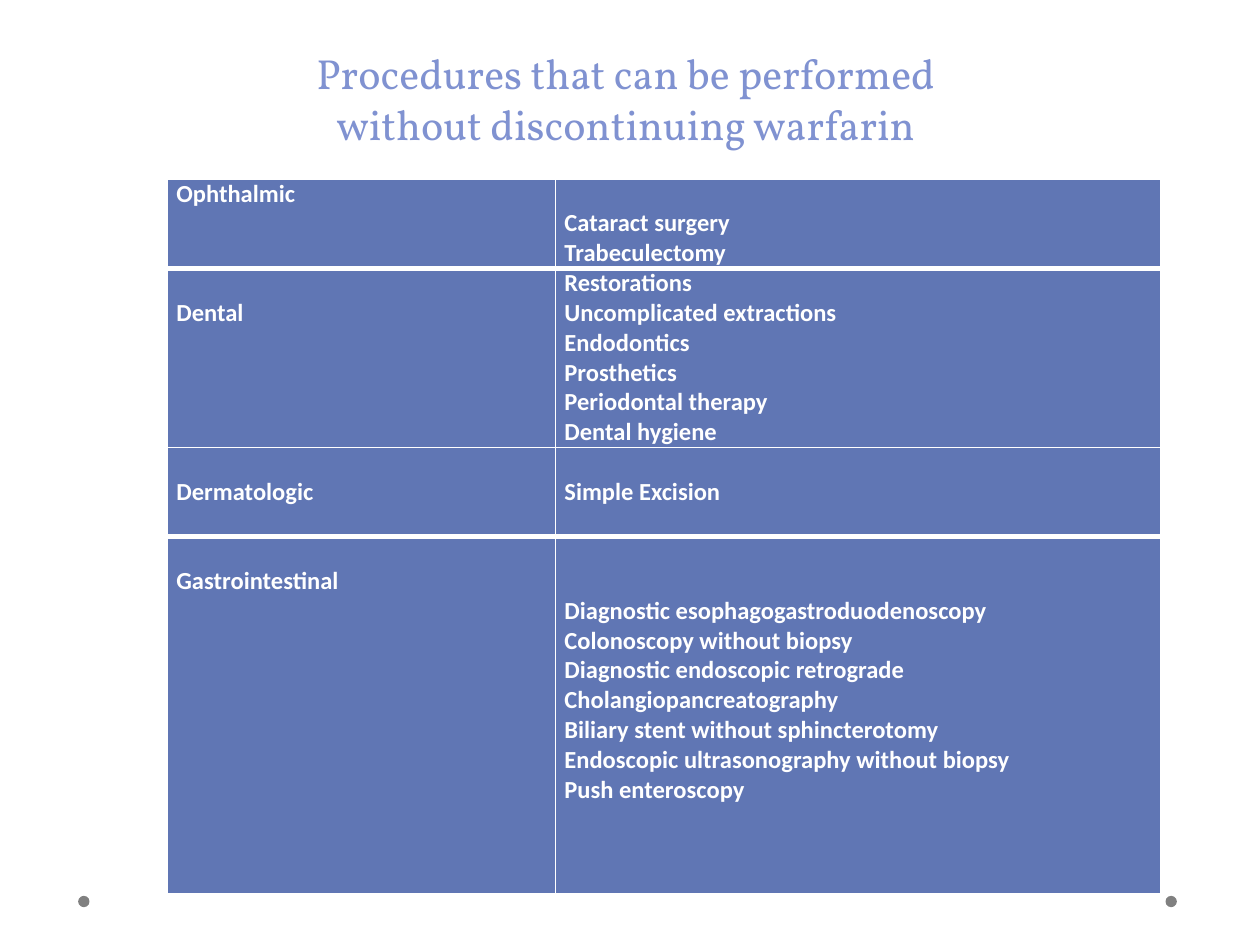
"""Build a slide listing procedures that can go ahead on warfarin."""
import pptx
import pptx.dml.color
import pptx.enum.shapes
import pptx.enum.text
import pptx.oxml.ns
import pptx.util
from lxml import etree
from pptx.util import Inches

COLOURS = {"title": "8092D1", "cell": "6076B4", "white": "FFFFFF", "dot": "808080"}
TITLE_FORMAT = {"name": "Vollkorn", "size": pptx.util.Pt(24), "bold": False}
CELL_FORMAT = {"name": "Calibri", "size": pptx.util.Pt(14), "bold": True}
LINE_HEIGHT = pptx.util.Pt(17)
COLUMN_WIDTHS = (3.08, 4.8)
THIN, THICK = 1, 3
ROW_RULES = (THIN, THICK, THIN, THICK, THIN)
ROWS = [
    (3, (0, ["Ophthalmic"]), (1, ["Cataract surgery", "Trabeculectomy"])),
    (6, (1, ["Dental"]),
     (0, ["Restorations", "Uncomplicated extractions", "Endodontics",
          "Prosthetics", "Periodontal therapy", "Dental hygiene"])),
    (3, (1, ["Dermatologic"]), (1, ["Simple Excision"])),
    (12, (1, ["Gastrointestinal"]),
     (2, ["Diagnostic esophagogastroduodenoscopy", "Colonoscopy without biopsy",
          "Diagnostic endoscopic retrograde Cholangiopancreatography",
          "Biliary stent without sphincterotomy",
          "Endoscopic ultrasonography without biopsy", "Push enteroscopy"])),
]


def colour(name):
    return pptx.dml.color.RGBColor.from_string(COLOURS[name])


def set_attributes(target, values):
    for name, value in values.items():
        setattr(target, name, value)


def write(para, text, font_format, colour_name):
    span = para.add_run()
    span.text = text
    set_attributes(span.font, font_format)
    span.font.color.rgb = colour(colour_name)


def add_title(page, text):
    title = page.shapes.title
    set_attributes(title, {"left": Inches(1.84), "top": Inches(0.25),
                           "width": Inches(6.25), "height": Inches(0.98)})
    frame = title.text_frame
    set_attributes(frame, {"word_wrap": True,
                           "auto_size": pptx.enum.text.MSO_AUTO_SIZE.NONE,
                           "vertical_anchor": pptx.enum.text.MSO_ANCHOR.BOTTOM})
    para = frame.paragraphs[0]
    set_attributes(para, {"alignment": pptx.enum.text.PP_ALIGN.CENTER,
                          "line_spacing": pptx.util.Pt(29)})
    write(para, text, TITLE_FORMAT, "title")


def add_dot(page, left):
    dot = page.shapes.add_shape(pptx.enum.shapes.MSO_SHAPE.OVAL, Inches(left),
                                Inches(7.11), Inches(0.09), Inches(0.09))
    dot.shadow.inherit = False
    dot.fill.solid()
    dot.fill.fore_color.rgb = colour("dot")
    dot.line.fill.background()


def set_borders(cell, top, bottom):
    properties = cell._tc.get_or_add_tcPr()
    widths = {"L": THIN, "R": THIN, "T": top, "B": bottom}
    for index, (side, width) in enumerate(widths.items()):
        line = etree.Element(pptx.oxml.ns.qn(f"a:ln{side}"),
                             w=str(pptx.util.Pt(width)))
        fill = etree.SubElement(line, pptx.oxml.ns.qn("a:solidFill"))
        etree.SubElement(fill, pptx.oxml.ns.qn("a:srgbClr"), val=COLOURS["white"])
        properties.insert(index, line)


def fill_cell(cell, lines_above, texts):
    set_attributes(cell, {"margin_left": Inches(0.07), "margin_right": Inches(0.07),
                          "margin_top": lines_above * LINE_HEIGHT,
                          "margin_bottom": 0})
    cell.fill.solid()
    cell.fill.fore_color.rgb = colour("cell")
    frame = cell.text_frame
    for index, text in enumerate(texts):
        para = frame.add_paragraph() if index else frame.paragraphs[0]
        write(para, text, CELL_FORMAT, "white")


def add_procedures(page):
    heights = [lines * LINE_HEIGHT for lines, *_ in ROWS]
    table = page.shapes.add_table(
        len(ROWS), len(COLUMN_WIDTHS), Inches(1.33), Inches(1.42),
        Inches(sum(COLUMN_WIDTHS)), sum(heights)).table
    for column, width in zip(table.columns, COLUMN_WIDTHS):
        column.width = Inches(width)
    for row_index, (_, *entries) in enumerate(ROWS):
        table.rows[row_index].height = heights[row_index]
        for column_index, (lines_above, texts) in enumerate(entries):
            cell = table.cell(row_index, column_index)
            fill_cell(cell, lines_above, texts)
            set_borders(cell, ROW_RULES[row_index], ROW_RULES[row_index + 1])


def main():
    deck = pptx.Presentation()
    set_attributes(deck, {"slide_width": Inches(10), "slide_height": Inches(7.5)})
    page = deck.slides.add_slide(deck.slide_layouts[5])
    for left in (9.25, 0.62):
        add_dot(page, left)
    add_title(page, "Procedures that can be performed without discontinuing warfarin")
    add_procedures(page)
    deck.save("out.pptx")


if __name__ == "__main__":
    main()
